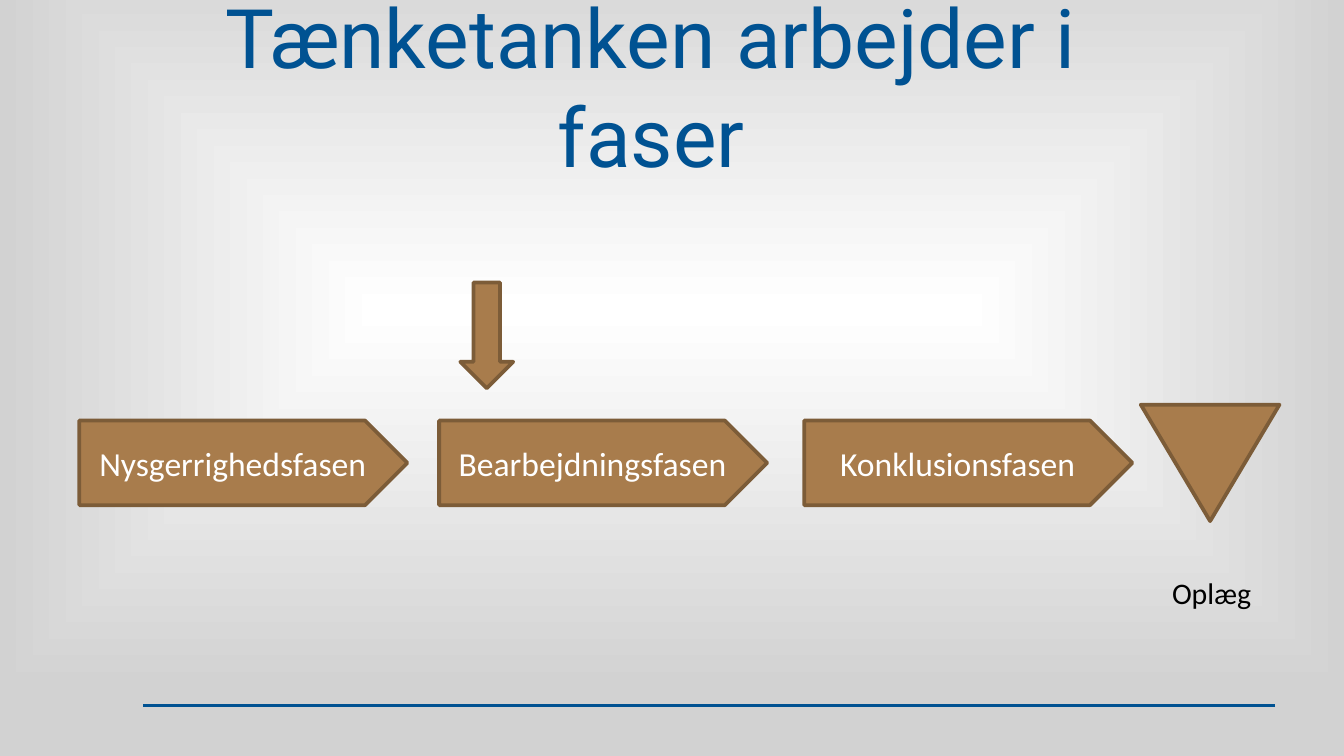
from lxml.etree import SubElement
from pptx import Presentation
from pptx.dml.color import RGBColor
from pptx.enum.shapes import MSO_CONNECTOR as CONNECTOR, MSO_SHAPE as SHAPE
from pptx.enum.text import MSO_ANCHOR as ANCHOR, PP_ALIGN as ALIGN
from pptx.oxml.ns import qn
from pptx.util import Cm, Pt

BLUE, BROWN, DARK_BROWN = "005292", "A87C4C", "7C5C38"
WHITE, GREY, BLACK = "FFFFFF", "D2D2D2", "000000"

TITLE = "Tænketanken arbejder i faser"
PHASES = [("Nysgerrighedsfasen", 1.5), ("Bearbejdningsfasen", 8.3), ("Konklusionsfasen", 15.2)]
PHASE_TOP, PHASE_WIDTH, PHASE_HEIGHT = 7.95, 6.2, 1.6
OUTCOME = "Oplæg"
GRADIENT_CENTER = {"l": 8, "t": 33, "r": 8, "b": 50}  # percent inset from each edge


def color(value):
    return RGBColor.from_string(value)


def write(shape, text, size=18, font="Calibri", fill=WHITE, anchor=ANCHOR.MIDDLE):
    frame = shape.text_frame
    frame.word_wrap = True
    frame.vertical_anchor = anchor
    paragraph = frame.paragraphs[0]
    paragraph.alignment = ALIGN.CENTER
    run = paragraph.add_run()
    run.text = text
    run.font.size = Pt(size)
    run.font.name = font
    run.font.color.rgb = color(fill)


def add_text(slide, box, text, **style):
    write(slide.shapes.add_textbox(*map(Cm, box)), text, **style)


def add_brown_shape(slide, kind, box):
    shape = slide.shapes.add_shape(kind, *map(Cm, box))
    shape.shadow.inherit = False
    shape.fill.solid()
    shape.fill.fore_color.rgb = color(BROWN)
    shape.line.color.rgb = color(DARK_BROWN)
    shape.line.width = Pt(2)
    return shape


def paint_background(slide):
    """Fade from a white centre rectangle to grey edges."""
    fill = slide.background.fill
    fill.gradient()
    for stop, value, position in zip(fill.gradient_stops, (WHITE, GREY), (0, 1)):
        stop.color.rgb = color(value)
        stop.position = position
    gradient = slide.element.find(".//" + qn("a:gradFill"))
    gradient.remove(gradient.find(qn("a:lin")))
    path = SubElement(gradient, qn("a:path"), {"path": "shape"})
    SubElement(path, qn("a:fillToRect"),
               {side: str(inset * 1000) for side, inset in GRADIENT_CENTER.items()})


def add_footer_line(slide):
    line = slide.shapes.add_connector(
        CONNECTOR.STRAIGHT, Cm(24.1), Cm(13.34), Cm(2.7), Cm(13.34))
    line.line.color.rgb = color(BLUE)
    line.line.width = Pt(1.5)
    SubElement(line.element.spPr, qn("a:effectLst"))


def main():
    presentation = Presentation()
    presentation.slide_width, presentation.slide_height = Cm(25.4), Cm(14.29)
    slide = presentation.slides.add_slide(presentation.slide_layouts[6])
    paint_background(slide)
    add_footer_line(slide)
    add_text(slide, (2.11, 0.48, 20.4, 2.26), TITLE, size=44, font="Roboto", fill=BLUE)

    for name, left in PHASES:
        box = (left, PHASE_TOP, PHASE_WIDTH, PHASE_HEIGHT)
        write(add_brown_shape(slide, SHAPE.PENTAGON, box), name)

    add_brown_shape(slide, SHAPE.DOWN_ARROW, (8.7, 5.34, 1, 2))
    triangle = add_brown_shape(slide, SHAPE.ISOSCELES_TRIANGLE, (21.56, 7.65, 2.62, 2.2))
    triangle.rotation = 180
    add_text(slide, (21.59, 10.74, 2.62, 0.94), OUTCOME,
             size=16, fill=BLACK, anchor=ANCHOR.TOP)

    presentation.save("out.pptx")


if __name__ == "__main__":
    main()
